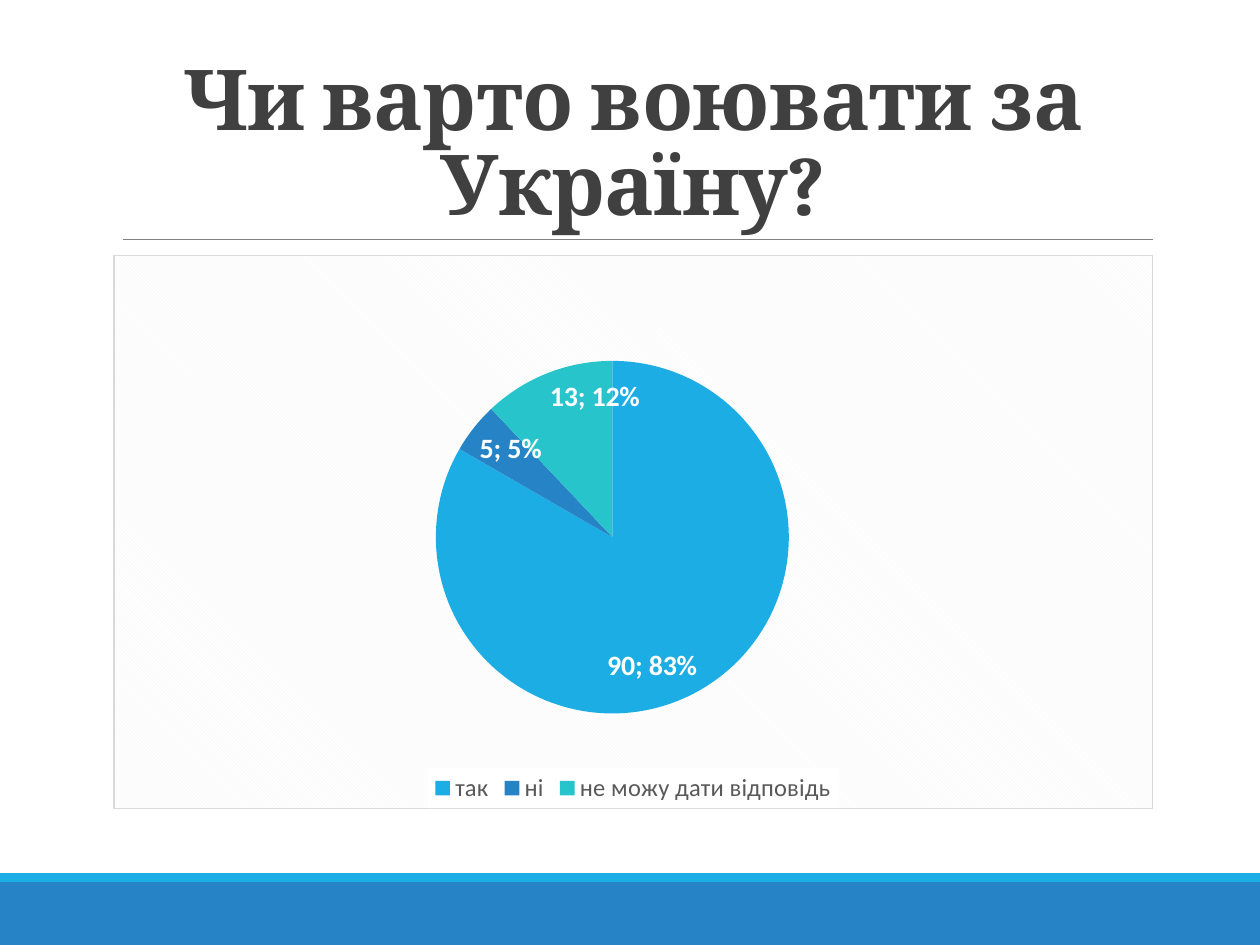
import pptx
import pptx.chart.data
import pptx.dml.color
import pptx.enum.chart
import pptx.enum.shapes
import pptx.enum.text
import pptx.oxml
import pptx.oxml.ns
import pptx.util
from pptx.util import Inches

THEME = {
    "colors": {
        "band": "2683C6", "stripe": "1CADE4", "rule": "808080", "title": "404040",
        "legend": "595959", "label": "FFFFFF", "slices": ["1CADE4", "2683C6", "28C4CC"],
        "hatch": "F2F2F2", "paper": "FFFFFF", "border": "D9D9D9",
    },
    "sizes": {"title": 48, "legend": 14, "label": 16, "chart": 10},
    "fonts": {"title": "Cambria", "body": "Calibri"},
}
COLORS, SIZES, FONTS = THEME["colors"], THEME["sizes"], THEME["fonts"]
NAMESPACES = pptx.oxml.ns.nsdecls("c", "a")


def assign(target, **values):
    for name, value in values.items():
        setattr(target, name, value)


def style_font(font, color, size, name, bold=False):
    assign(font, size=pptx.util.Pt(size), name=name, bold=bold)
    font.color.rgb = pptx.dml.color.RGBColor.from_string(color)


deck = pptx.Presentation()
assign(deck, slide_width=Inches(10), slide_height=Inches(7.5))
page = deck.slides.add_slide(deck.slide_layouts[5])

for name, top, height in [("band", 7, 0.5), ("stripe", 6.93, 0.07)]:
    bar = page.shapes.add_shape(
        pptx.enum.shapes.MSO_SHAPE.RECTANGLE, 0, Inches(top), Inches(10), Inches(height))
    bar.shadow.inherit = False
    bar.fill.solid()
    bar.fill.fore_color.rgb = pptx.dml.color.RGBColor.from_string(COLORS[name])
    bar.line.fill.background()

rule = page.shapes.add_connector(
    pptx.enum.shapes.MSO_CONNECTOR.STRAIGHT, Inches(0.98), Inches(1.9), Inches(9.15), Inches(1.9))
rule.line.width = pptx.util.Pt(0.5)
rule.line.color.rgb = pptx.dml.color.RGBColor.from_string(COLORS["rule"])
rule._element.spPr.append(pptx.oxml.parse_xml(f"<a:effectLst {NAMESPACES}/>"))

title = page.shapes.title
assign(title, left=Inches(0.9), top=Inches(0.31), width=Inches(8.25), height=Inches(1.59))
assign(title.text_frame, word_wrap=True, auto_size=pptx.enum.text.MSO_AUTO_SIZE.NONE,
       vertical_anchor=pptx.enum.text.MSO_ANCHOR.BOTTOM)
para = title.text_frame.paragraphs[0]
assign(para, alignment=pptx.enum.text.PP_ALIGN.CENTER, line_spacing=0.85)
span = para.add_run()
span.text = "Чи варто воювати за Україну?"
style_font(span.font, COLORS["title"], SIZES["title"], FONTS["title"], True)
span._r.get_or_add_rPr().set("spc", "-50")

answers = pptx.chart.data.CategoryChartData()
answers.categories = ["так", "ні", "не можу дати відповідь"]
answers.add_series("Відповіді", [90, 5, 13])
chart = page.shapes.add_chart(
    pptx.enum.chart.XL_CHART_TYPE.PIE,
    Inches(0.9), Inches(2.02), Inches(8.25), Inches(4.4), answers).chart
assign(chart, has_title=False, has_legend=True)
assign(chart.font, size=pptx.util.Pt(SIZES["chart"]), name=FONTS["body"])
assign(chart.legend, position=pptx.enum.chart.XL_LEGEND_POSITION.BOTTOM, include_in_layout=False)
style_font(chart.legend.font, COLORS["legend"], SIZES["legend"], FONTS["body"])

pie = chart.plots[0]
pie.vary_by_categories = True
series = pie.series[0]
for index, color in enumerate(COLORS["slices"]):
    fill = series.points[index].format.fill
    fill.solid()
    fill.fore_color.rgb = pptx.dml.color.RGBColor.from_string(color)

labels = series.data_labels
assign(labels, show_value=True, show_percentage=True,
       position=pptx.enum.chart.XL_LABEL_POSITION.INSIDE_END)
style_font(labels.font, COLORS["label"], SIZES["label"], FONTS["body"], True)
labels._element.find(pptx.oxml.ns.qn("c:showBubbleSize")).addnext(
    pptx.oxml.parse_xml(f"<c:separator {NAMESPACES}>; </c:separator>"))

plot_area = chart._chartSpace.chart.plotArea
for layout in plot_area.findall(pptx.oxml.ns.qn("c:layout")):
    plot_area.remove(layout)
bounds = {"x": 0.31, "y": 0.19, "w": 0.34, "h": 0.64}
frame = "".join(f'<c:{side} val="{value}"/>' for side, value in bounds.items())
plot_area.insert(0, pptx.oxml.parse_xml(
    f'<c:layout {NAMESPACES}><c:manualLayout><c:layoutTarget val="inner"/>'
    f'<c:xMode val="edge"/><c:yMode val="edge"/>{frame}</c:manualLayout></c:layout>'))

chart._chartSpace.chart.addnext(pptx.oxml.parse_xml(
    f'<c:spPr {NAMESPACES}><a:pattFill prst="dkDnDiag">'
    f'<a:fgClr><a:srgbClr val="{COLORS["hatch"]}"/></a:fgClr>'
    f'<a:bgClr><a:srgbClr val="{COLORS["paper"]}"/></a:bgClr></a:pattFill>'
    f'<a:ln w="{pptx.util.Pt(0.75)}"><a:solidFill><a:srgbClr val="{COLORS["border"]}"/>'
    f'</a:solidFill></a:ln></c:spPr>'))
chart.legend._element.find(pptx.oxml.ns.qn("c:txPr")).addprevious(pptx.oxml.parse_xml(
    f'<c:spPr {NAMESPACES}><a:solidFill><a:srgbClr val="{COLORS["paper"]}"/>'
    f'</a:solidFill></c:spPr>'))

deck.save("out.pptx")
